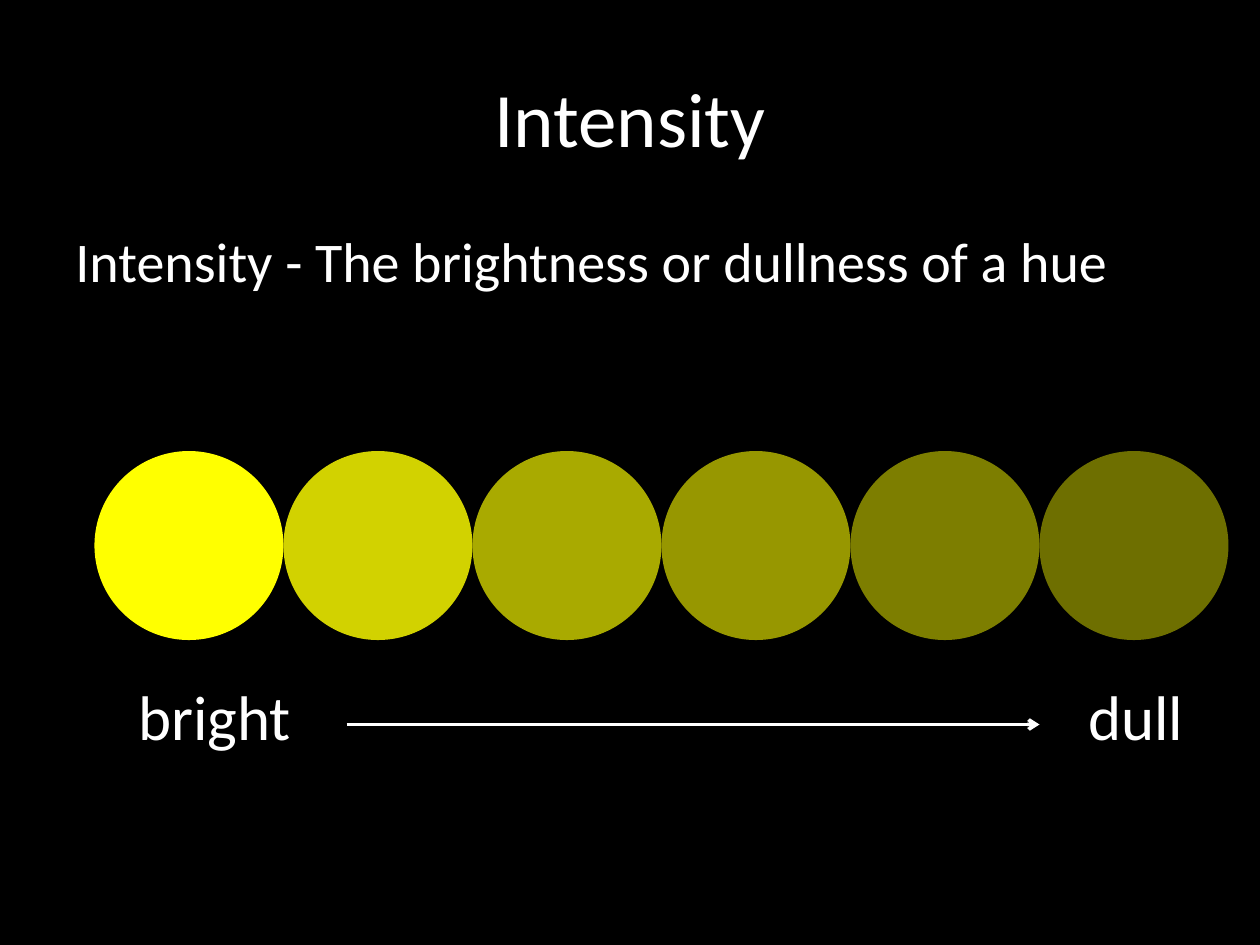
import pptx
import pptx.dml.color
import pptx.enum.shapes
import pptx.enum.text
import pptx.oxml.ns
import pptx.util
from lxml import etree
from pptx.util import Inches

RGBColor = pptx.dml.color.RGBColor
BLACK = RGBColor(0x00, 0x00, 0x00)
WHITE = RGBColor(0xFF, 0xFF, 0xFF)
HUE_STEPS = [
    RGBColor(0xFF, 0xFF, 0x00),
    RGBColor(0xD2, 0xD2, 0x00),
    RGBColor(0xA9, 0xAA, 0x00),
    RGBColor(0x97, 0x97, 0x00),
    RGBColor(0x7D, 0x7E, 0x00),
    RGBColor(0x6E, 0x6F, 0x00),
]
FONT = "Calibri"
CIRCLE_SIZE = 1.5
SCALE_LEFT, SCALE_TOP = 0.75, 3.58
LABEL_TOP, LABEL_HEIGHT = 5.33, 0.71


def write(frame, text, size, align=pptx.enum.text.PP_ALIGN.LEFT):
    paragraph = frame.paragraphs[0]
    paragraph.alignment = align
    run = paragraph.add_run()
    run.text = text
    run.font.name = FONT
    run.font.size = pptx.util.Pt(size)
    run.font.color.rgb = WHITE


def add_title(slide, text):
    title = slide.shapes.title
    title.left, title.top = Inches(0.5), Inches(0.3)
    title.width, title.height = Inches(9), Inches(1.25)
    title.text_frame.vertical_anchor = pptx.enum.text.MSO_ANCHOR.MIDDLE
    write(title.text_frame, text, 44, pptx.enum.text.PP_ALIGN.CENTER)


def add_text(slide, text, left, top, width, height, size, wrap):
    box = slide.shapes.add_textbox(
        Inches(left), Inches(top), Inches(width), Inches(height))
    box.text_frame.word_wrap = wrap
    write(box.text_frame, text, size)


def add_intensity_scale(slide):
    """Draw touching circles from the brightest to the dullest hue."""
    for step, color in enumerate(HUE_STEPS):
        circle = slide.shapes.add_shape(
            pptx.enum.shapes.MSO_SHAPE.OVAL,
            Inches(SCALE_LEFT + step * CIRCLE_SIZE), Inches(SCALE_TOP),
            Inches(CIRCLE_SIZE), Inches(CIRCLE_SIZE))
        circle.shadow.inherit = False
        circle.fill.solid()
        circle.fill.fore_color.rgb = color
        circle.line.fill.background()


def add_arrow(slide, start_x, end_x, y):
    arrow = slide.shapes.add_connector(
        pptx.enum.shapes.MSO_CONNECTOR.STRAIGHT,
        Inches(start_x), Inches(y), Inches(end_x), Inches(y))
    arrow.line.color.rgb = WHITE
    arrow.line.width = pptx.util.Pt(2)
    qn = pptx.oxml.ns.qn
    properties = arrow._element.spPr
    etree.SubElement(properties.find(qn("a:ln")), qn("a:tailEnd"), type="arrow")
    etree.SubElement(properties, qn("a:effectLst"))


def main():
    deck = pptx.Presentation()
    deck.slide_width, deck.slide_height = Inches(10), Inches(7.5)
    slide = deck.slides.add_slide(deck.slide_layouts[5])
    slide.background.fill.solid()
    slide.background.fill.fore_color.rgb = BLACK

    add_title(slide, "Intensity")
    add_text(slide, "Intensity - The brightness or dullness of a hue",
             0.5, 1.75, 9, 0.92, 32, wrap=True)
    add_intensity_scale(slide)
    add_text(slide, "bright", 1, LABEL_TOP, 1.43, LABEL_HEIGHT, 36, wrap=False)
    add_arrow(slide, 2.75, 8.25, 5.75)
    add_text(slide, "dull", 8.54, LABEL_TOP, 0.96, LABEL_HEIGHT, 36, wrap=False)

    deck.save("out.pptx")


if __name__ == "__main__":
    main()
